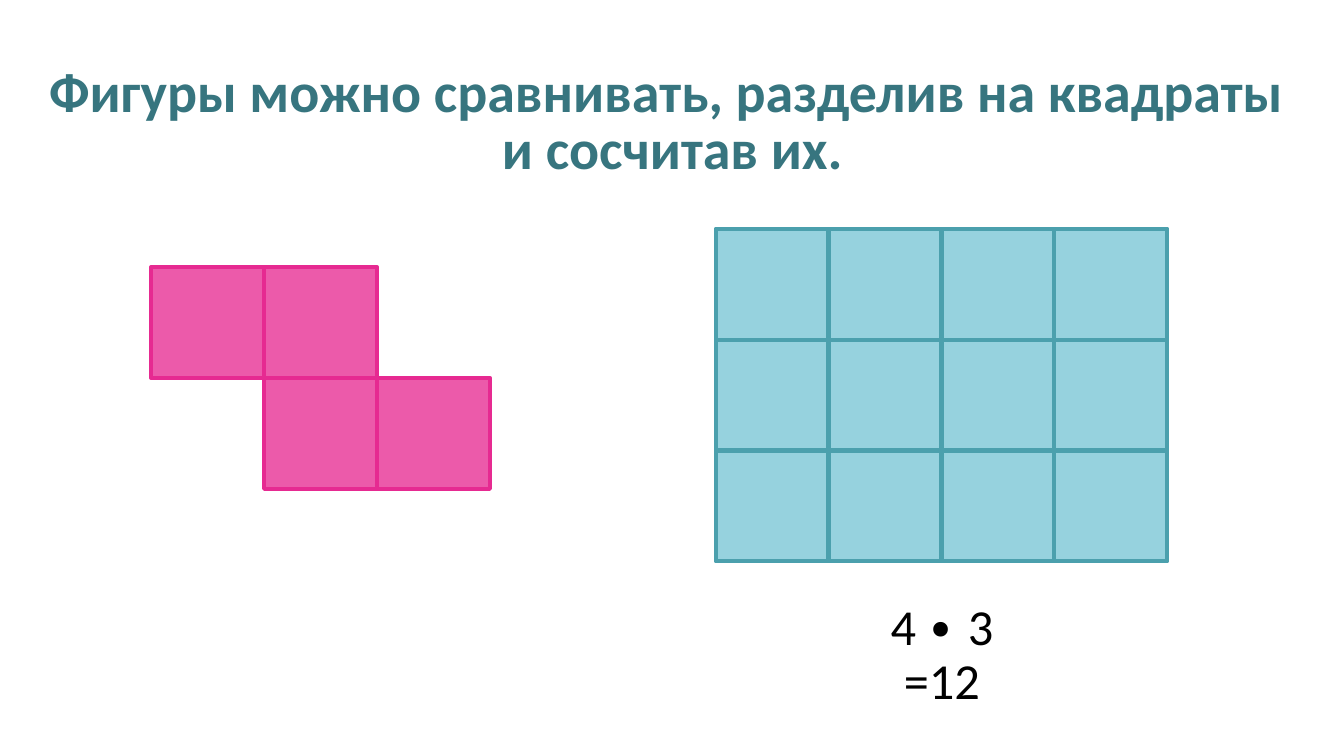
from pptx import Presentation
from pptx import util as u
from pptx.dml.color import RGBColor
from pptx.enum import shapes, text

TEAL = RGBColor(0x37, 0x75, 0x7F)
BLACK = RGBColor(0, 0, 0)
PINK = RGBColor(0xEC, 0x5A, 0xAA)
PINK_EDGE = RGBColor(0xE6, 0x2A, 0x91)
AQUA = RGBColor(0x96, 0xD2, 0xDE)
AQUA_EDGE = RGBColor(0x4B, 0xA0, 0xAD)


class Painter:
    """Draws text and figures made of unit squares on one page."""

    font = "Calibri"
    cell_width, cell_height = 80.64, 79.2
    edge = 3

    def __init__(self, page):
        self.page = page

    def figure(self, left, top, cells, fill, line):
        group = self.page.shapes.add_group_shape()
        for row, column in cells:
            square = group.shapes.add_shape(
                shapes.MSO_SHAPE.RECTANGLE,
                u.Pt(left + column * self.cell_width),
                u.Pt(top + row * self.cell_height),
                u.Pt(self.cell_width), u.Pt(self.cell_height))
            square.shadow.inherit = False
            square.fill.solid()
            square.fill.fore_color.rgb = fill
            square.line.color.rgb = line
            square.line.width = u.Pt(self.edge)

    def caption(self, left, top, width, height, lines, color,
                spacing, before, bold=False):
        box = self.page.shapes.add_textbox(
            u.Pt(left), u.Pt(top), u.Pt(width), u.Pt(height))
        frame = box.text_frame
        frame.word_wrap = True
        frame.vertical_anchor = text.MSO_ANCHOR.TOP
        para = frame.paragraphs[0]
        para.alignment = text.PP_ALIGN.CENTER
        para.line_spacing = spacing
        para.space_before = u.Pt(before)
        for number, spans in enumerate(lines):
            if number:
                para.add_line_break()
            for words, size in spans:
                span = para.add_run()
                span.text = words
                span.font.name = self.font
                span.font.size = u.Pt(size)
                span.font.bold = bold
                span.font.color.rgb = color


def main():
    deck = Presentation()
    deck.slide_width, deck.slide_height = u.Pt(960), u.Pt(540)
    painter = Painter(deck.slides.add_slide(deck.slide_layouts[6]))

    painter.caption(
        13.68, 43.92, 933.12, 79.2,
        [[("Фигуры можно сравнивать, разделив на квадраты ", 40)],
         [("и сосчитав их.", 40)]],
        TEAL, spacing=0.85, before=13, bold=True)

    zigzag = [(0, 0), (0, 1), (1, 1), (1, 2)]
    painter.figure(108, 190.8, zigzag, PINK, PINK_EDGE)

    rectangle = [(row, column) for row in range(3) for column in range(4)]
    painter.figure(511.2, 163.44, rectangle, AQUA, AQUA_EDGE)

    painter.caption(
        604.08, 426.24, 137.52, 46.8,
        [[("4", 36), (" ", 28), ("∙ 3 =12", 36)]],
        BLACK, spacing=0.9, before=10)

    deck.save("out.pptx")


if __name__ == "__main__":
    main()
